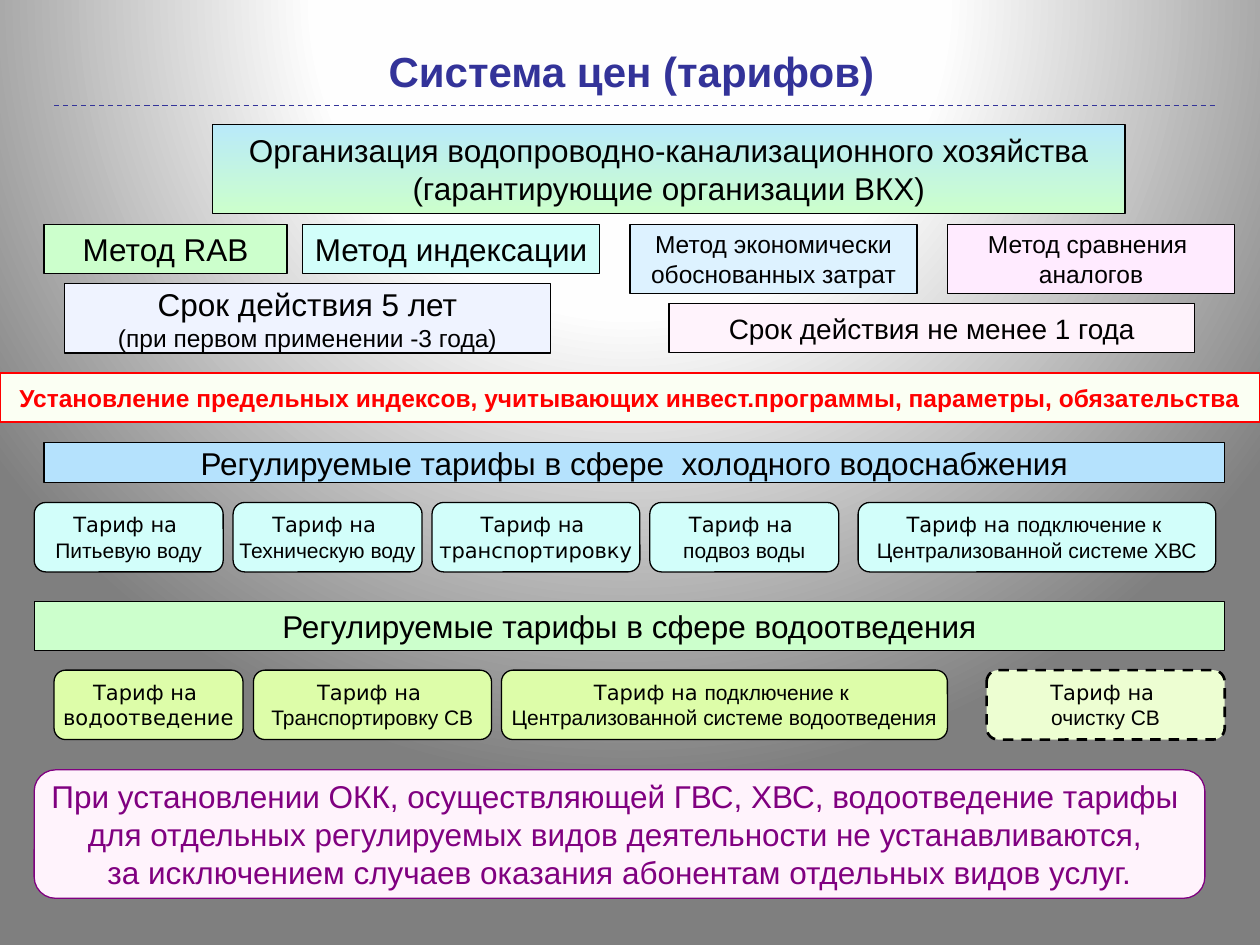
import lxml.etree
import pptx
import pptx.dml.color
import pptx.enum.dml
import pptx.enum.shapes
import pptx.enum.text
import pptx.oxml
import pptx.oxml.ns
import pptx.util
from pptx.util import Cm, Pt

COLORS = {
    "black": "000000", "navy": "333399", "red": "FF0000", "purple": "800080",
    "sky": "B9EAF9", "green": "CCFFCC", "aqua": "D2FEFA", "lavender": "EFF3FF",
    "blue": "B5E2FD", "pale blue": "DDF2FF", "pink": "FFEBFF", "rose": "FFF3FC",
    "cream": "FBFFF3", "lime": "DDFDA9", "pale lime": "EDFED2",
    "white": "FFFFFF", "near white": "FEFEFE", "gray": "7F7F7F",
}
ARIAL = "Arial"
DEJAVU = "DejaVu Sans"
SHAPES = pptx.enum.shapes.MSO_SHAPE
DASH = pptx.enum.dml.MSO_LINE.DASH


def rgb(name):
    return pptx.dml.color.RGBColor.from_string(COLORS[name])


def format_line(line, color, width, dash=None):
    line.color.rgb = rgb(color)
    line.width = Pt(width)
    if dash is not None:
        line.dash_style = dash


def format_font(font, size, color, name=ARIAL, bold=False):
    font.name = name
    font.size = Pt(size)
    font.bold = bold
    font.color.rgb = rgb(color)


def set_background(slide):
    """Radial gradient centred above the slide."""
    slide.background.fill.gradient()
    gradient = slide.background._cSld.find(".//" + pptx.oxml.ns.qn("a:gradFill"))
    stops = ((0, "white"), (40, "near white"), (100, "gray"))
    stop_xml = "".join(
        f'<a:gs pos="{position * 1000}"><a:srgbClr val="{COLORS[color]}"/></a:gs>'
        for position, color in stops)
    gradient.getparent().replace(gradient, pptx.oxml.parse_xml(
        f'<a:gradFill {pptx.oxml.ns.nsdecls("a")} rotWithShape="1">'
        f'<a:gsLst>{stop_xml}</a:gsLst><a:path path="circle">'
        '<a:fillToRect l="50000" t="-80000" r="50000" b="180000"/>'
        '</a:path></a:gradFill>'))


def add_title(slide, text):
    title = slide.shapes.title
    title.left, title.top, title.width, title.height = Cm(1.3), Cm(0.53), Cm(22.86), Cm(1.8)
    title.text_frame.text = text
    title.text_frame.vertical_anchor = pptx.enum.text.MSO_ANCHOR.MIDDLE
    paragraph = title.text_frame.paragraphs[0]
    paragraph.alignment = pptx.enum.text.PP_ALIGN.CENTER
    format_font(paragraph.runs[0].font, 24, "navy", bold=True)


def add_rule(slide, left, right, top):
    rule = slide.shapes.add_connector(
        pptx.enum.shapes.MSO_CONNECTOR.STRAIGHT, Cm(left), Cm(top), Cm(right), Cm(top))
    format_line(rule.line, "navy", 0.75, DASH)
    lxml.etree.SubElement(rule._element.spPr, pptx.oxml.ns.qn("a:effectLst"))


def add_box(slide, position, lines, fill, size=18, kind=SHAPES.RECTANGLE,
            color="black", line_color="black", line_width=0.75, dash=None, bold=False):
    """Each line is a string in Arial or a list of (text, font, size) runs."""
    box = slide.shapes.add_shape(kind, *map(Cm, position))
    box.shadow.inherit = False
    if isinstance(fill, tuple):
        box.fill.gradient()
        box.fill.gradient_angle = 270
        for stop, position_share, name in zip(box.fill.gradient_stops, (0, 1), fill):
            stop.position = position_share
            stop.color.rgb = rgb(name)
    else:
        box.fill.solid()
        box.fill.fore_color.rgb = rgb(fill)
    format_line(box.line, line_color, line_width, dash)
    text_frame = box.text_frame
    text_frame.word_wrap = False
    text_frame.vertical_anchor = pptx.enum.text.MSO_ANCHOR.MIDDLE
    for index, line in enumerate(lines):
        paragraph = text_frame.add_paragraph() if index else text_frame.paragraphs[0]
        paragraph.alignment = pptx.enum.text.PP_ALIGN.CENTER
        runs = [(line, ARIAL, size)] if isinstance(line, str) else line
        for text, font_name, font_size in runs:
            run = paragraph.add_run()
            run.text = text
            format_font(run.font, font_size, color, font_name, bold)


def add_tariff(slide, left, top, width, subject, fill, connection=False,
               font_name=ARIAL, **line_format):
    heading = [("Тариф на ", DEJAVU, 12)]
    if connection:
        heading.append(("подключение к ", ARIAL, 12))
    add_box(slide, (left, top, width, 1.4), [heading, [(subject, font_name, 12)]],
            fill, kind=SHAPES.ROUNDED_RECTANGLE, **line_format)


def add_methods(slide):
    add_box(slide, (4.29, 2.51, 18.39, 1.8),
            ["Организация водопроводно-канализационного хозяйства",
             "(гарантирующие организации ВКХ)"], ("sky", "green"))
    top = 4.52
    add_box(slide, (0.89, top, 4.9, 0.99), ["Метод RAB"], "green")
    add_box(slide, (6.1, top, 5.99, 0.99), ["Метод индексации"], "aqua")
    add_box(slide, (12.7, top, 5.79, 1.4),
            ["Метод экономически", "обоснованных затрат"], "pale blue", 14)
    add_box(slide, (19.1, top, 5.79, 1.4), ["Метод сравнения ", "аналогов"], "pink", 14)
    add_box(slide, (1.3, 5.72, 9.8, 1.4),
            ["Срок действия 5 лет", [("(при первом применении -3 года)", ARIAL, 14)]],
            "lavender")
    add_box(slide, (13.49, 6.12, 10.59, 0.99),
            ["Срок действия не менее 1 года"], "rose", 16)
    add_box(slide, (0, 7.52, 25.4, 0.99),
            ["Установление предельных индексов, учитывающих инвест.программы, "
             "параметры, обязательства"],
            "cream", 14, color="red", line_color="red", line_width=1.5, bold=True)


def add_cold_water(slide):
    add_box(slide, (0.89, 8.92, 23.8, 0.81),
            ["Регулируемые тарифы в сфере  холодного водоснабжения"], "blue")
    top = 10.13
    left = 0.69
    for subject, width, font_name in (
            ("Питьевую воду", 3.81, ARIAL), ("Техническую воду", 3.81, ARIAL),
            ("транспортировку", 4.19, DEJAVU), ("подвоз воды", 3.81, ARIAL)):
        add_tariff(slide, left, top, width, subject, "aqua", font_name=font_name)
        left += width + 0.2
    add_tariff(slide, 17.3, top, 7.21, "Централизованной системе ХВС", "aqua",
               connection=True)


def add_sewerage(slide):
    add_box(slide, (0.69, 12.12, 24, 0.99),
            ["Регулируемые тарифы в сфере водоотведения"], "green")
    top = 13.51
    add_tariff(slide, 1.09, top, 3.81, "водоотведение", "lime", font_name=DEJAVU)
    add_tariff(slide, 5.11, top, 4.8, "Транспортировку СВ", "lime")
    add_tariff(slide, 10.11, top, 8.99, "Централизованной системе водоотведения", "lime",
               connection=True)
    add_tariff(slide, 19.89, top, 4.8, "очистку СВ", "pale lime",
               line_width=1.5, dash=DASH)


def main():
    presentation = pptx.Presentation()
    presentation.slide_width, presentation.slide_height = Cm(25.4), Cm(19.05)
    slide = presentation.slides.add_slide(presentation.slide_layouts[5])
    set_background(slide)
    add_title(slide, "Система цен (тарифов)")
    add_rule(slide, 1.09, 24.51, 2.13)
    add_methods(slide)
    add_cold_water(slide)
    add_sewerage(slide)
    add_box(slide, (0.69, 15.52, 23.6, 2.59),
            ["При установлении ОКК, осуществляющей ГВС, ХВС, водоотведение тарифы ",
             "для отдельных регулируемых видов деятельности не устанавливаются, ",
             "за исключением случаев оказания абонентам отдельных видов услуг."],
            "rose", kind=SHAPES.ROUNDED_RECTANGLE, color="purple", line_color="purple")
    presentation.save("out.pptx")


if __name__ == "__main__":
    main()
